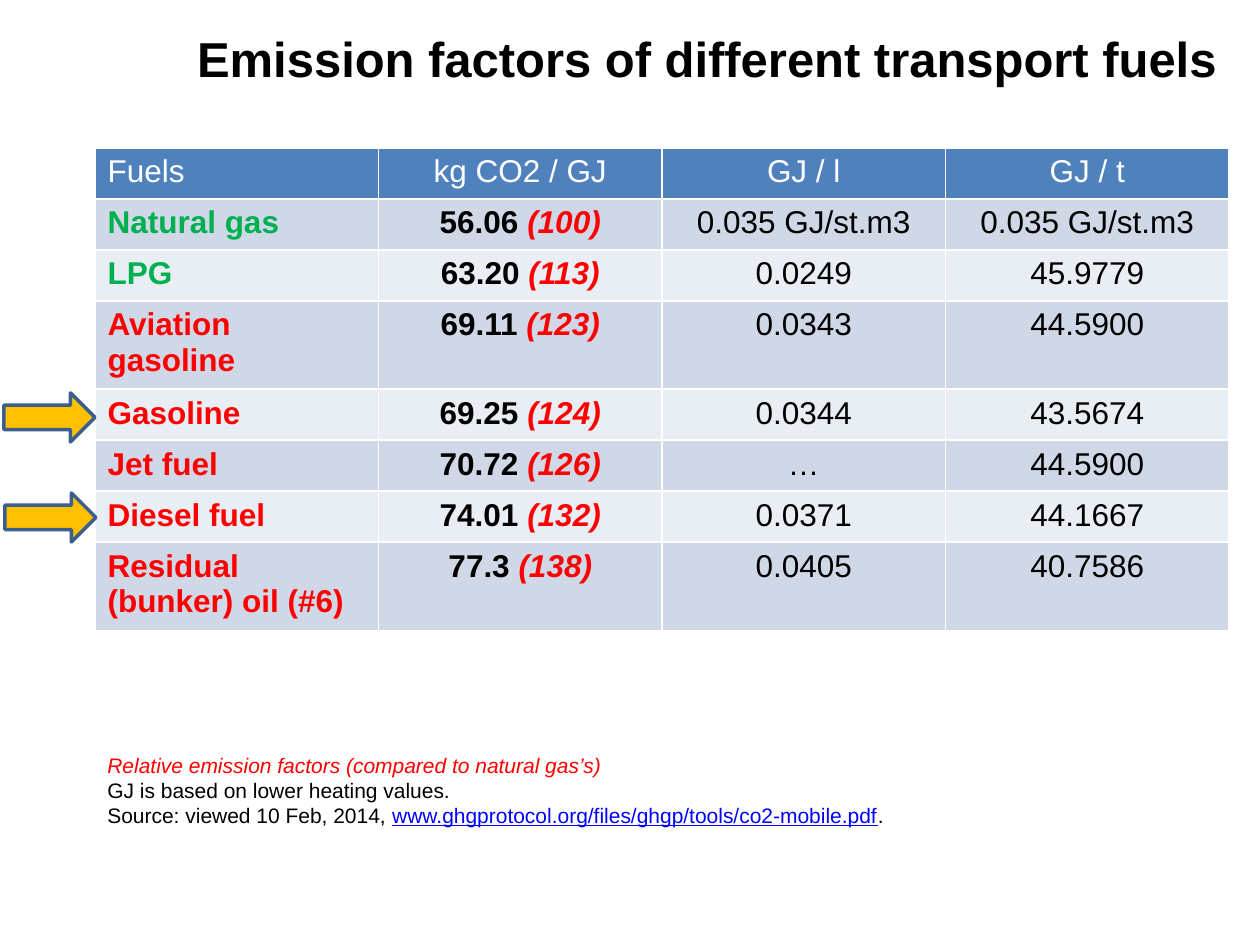
from dataclasses import dataclass

from pptx import Presentation
from pptx.dml.color import RGBColor
from pptx.enum.shapes import MSO_SHAPE
from pptx.enum.text import MSO_ANCHOR, PP_ALIGN
from pptx.slide import Slide
from pptx.table import _Cell
from pptx.text.text import Font, TextFrame, _Paragraph
from pptx.util import Emu, Pt

EMU_PER_PX = 914400 / 126
FONT_NAME = "Arial"
COLORS = {
    "black": "000000",
    "white": "FFFFFF",
    "red": "FF0000",
    "green": "00B050",
    "link": "0000FF",
    "header": "4F81BD",
    "odd_row": "D0D8E8",
    "even_row": "E9EDF4",
    "arrow": "FFC000",
    "arrow_line": "3A5F8C",
}
TABLE_LEFT, TABLE_TOP, COLUMN_WIDTH = 95, 148, 283.5
ROW_HEIGHT, TALL_ROW_HEIGHT = 51, 83
ARROW_WIDTH, ARROW_HEIGHT = 91, 49


@dataclass(frozen=True)
class Fuel:
    name: str
    color: str
    factor: str
    relative: str
    per_litre: str
    per_tonne: str
    height: int = ROW_HEIGHT


@dataclass(frozen=True)
class Span:
    text: str
    color: str = "black"
    italic: bool = False
    underline: bool = False


@dataclass(frozen=True)
class Arrow:
    left: int
    top: int


HEADINGS = ["Fuels", "kg CO2 / GJ", "GJ / l", "GJ / t"]
FUELS = [
    Fuel("Natural gas", "green", "56.06", "100", "0.035 GJ/st.m3", "0.035 GJ/st.m3"),
    Fuel("LPG", "green", "63.20", "113", "0.0249", "45.9779"),
    Fuel("Aviation gasoline", "red", "69.11", "123", "0.0343", "44.5900", TALL_ROW_HEIGHT),
    Fuel("Gasoline", "red", "69.25", "124", "0.0344", "43.5674"),
    Fuel("Jet fuel", "red", "70.72", "126", "…", "44.5900"),
    Fuel("Diesel fuel", "red", "74.01", "132", "0.0371", "44.1667"),
    Fuel("Residual (bunker) oil (#6)", "red", "77.3", "138", "0.0405", "40.7586", TALL_ROW_HEIGHT),
]
NOTES = [
    [Span("Relative emission factors (compared to natural gas’s)", "red", italic=True)],
    [Span("GJ is based on lower heating values.")],
    [
        Span("Source: viewed 10 Feb, 2014, "),
        Span("www.ghgprotocol.org/files/ghgp/tools/co2-mobile.pdf", "link", underline=True),
        Span("."),
    ],
]
ARROWS = [Arrow(4, 393), Arrow(5, 493)]


def px(length: float) -> Emu:
    return Emu(round(length * EMU_PER_PX))


def rgb(color: str) -> RGBColor:
    return RGBColor.from_string(COLORS[color])


def style_font(font: Font, size: int, bold: bool) -> None:
    font.name = FONT_NAME
    font.size = Pt(size)
    font.bold = bold


def write_spans(paragraph: _Paragraph, spans: list[Span], size: int, bold: bool = False) -> None:
    style_font(paragraph.font, size, bold)
    for span in spans:
        run = paragraph.add_run()
        run.text = span.text
        style_font(run.font, size, bold)
        run.font.color.rgb = rgb(span.color)
        run.font.italic = span.italic
        run.font.underline = span.underline


def add_text_frame(slide: Slide, left: int, top: int, width: int, height: int) -> TextFrame:
    shape = slide.shapes.add_textbox(px(left), px(top), px(width), px(height))
    shape.text_frame.word_wrap = True
    return shape.text_frame


def fill_cell(cell: _Cell, spans: list[Span], fill: str, bold: bool, centered: bool) -> None:
    cell.fill.solid()
    cell.fill.fore_color.rgb = rgb(fill)
    paragraph = cell.text_frame.paragraphs[0]
    paragraph.alignment = PP_ALIGN.CENTER if centered else PP_ALIGN.LEFT
    write_spans(paragraph, spans, 18, bold)


def add_fuel_table(slide: Slide) -> None:
    heights = [ROW_HEIGHT] + [fuel.height for fuel in FUELS]
    table = slide.shapes.add_table(
        len(heights), len(HEADINGS), px(TABLE_LEFT), px(TABLE_TOP),
        px(COLUMN_WIDTH * len(HEADINGS)), px(sum(heights)),
    ).table
    for column in table.columns:
        column.width = px(COLUMN_WIDTH)
    for row, height in zip(table.rows, heights):
        row.height = px(height)
    for index, heading in enumerate(HEADINGS):
        fill_cell(table.cell(0, index), [Span(heading, "white")], "header", False, index > 0)
    for number, fuel in enumerate(FUELS, start=1):
        fill = "odd_row" if number % 2 else "even_row"
        contents = [
            [Span(fuel.name, fuel.color)],
            [Span(f"{fuel.factor} "), Span(f"({fuel.relative})", "red", italic=True)],
            [Span(fuel.per_litre)],
            [Span(fuel.per_tonne)],
        ]
        for index, spans in enumerate(contents):
            fill_cell(table.cell(number, index), spans, fill, index < 2, index > 0)


def add_arrow(slide: Slide, arrow: Arrow) -> None:
    shape = slide.shapes.add_shape(
        MSO_SHAPE.RIGHT_ARROW, px(arrow.left), px(arrow.top), px(ARROW_WIDTH), px(ARROW_HEIGHT)
    )
    shape.shadow.inherit = False
    shape.fill.solid()
    shape.fill.fore_color.rgb = rgb("arrow")
    shape.line.color.rgb = rgb("arrow_line")
    shape.line.width = Pt(2)


def main() -> None:
    """Build the slide on emission factors of transport fuels."""
    presentation = Presentation()
    presentation.slide_width, presentation.slide_height = px(1260), px(945)
    slide = presentation.slides.add_slide(presentation.slide_layouts[6])

    title = add_text_frame(slide, 95, 10, 1134, 95)
    title.vertical_anchor = MSO_ANCHOR.MIDDLE
    title.paragraphs[0].alignment = PP_ALIGN.RIGHT
    write_spans(title.paragraphs[0], [Span("Emission factors of different transport fuels")], 28, True)

    add_fuel_table(slide)

    notes = add_text_frame(slide, 95, 746, 1131, 89)
    for index, spans in enumerate(NOTES):
        paragraph = notes.add_paragraph() if index else notes.paragraphs[0]
        write_spans(paragraph, spans, 12)

    for arrow in ARROWS:
        add_arrow(slide, arrow)
    presentation.save("out.pptx")


if __name__ == "__main__":
    main()
